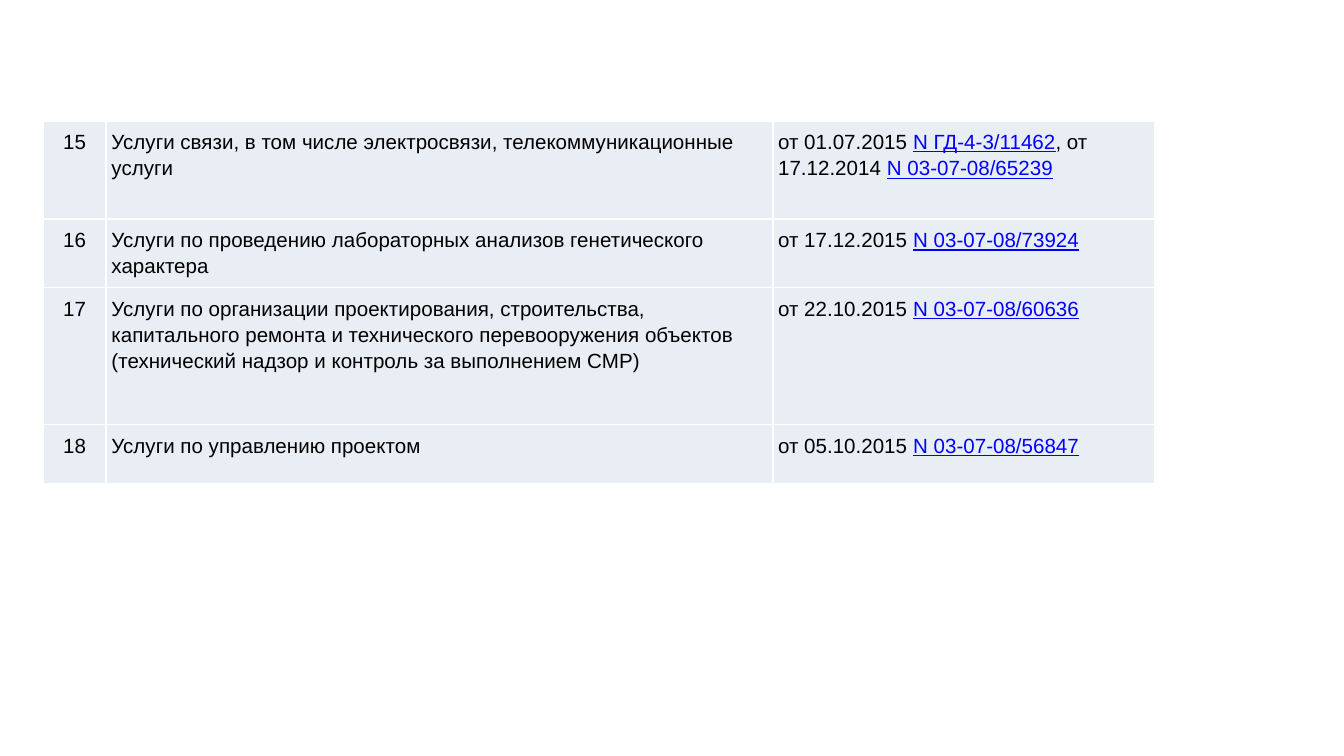
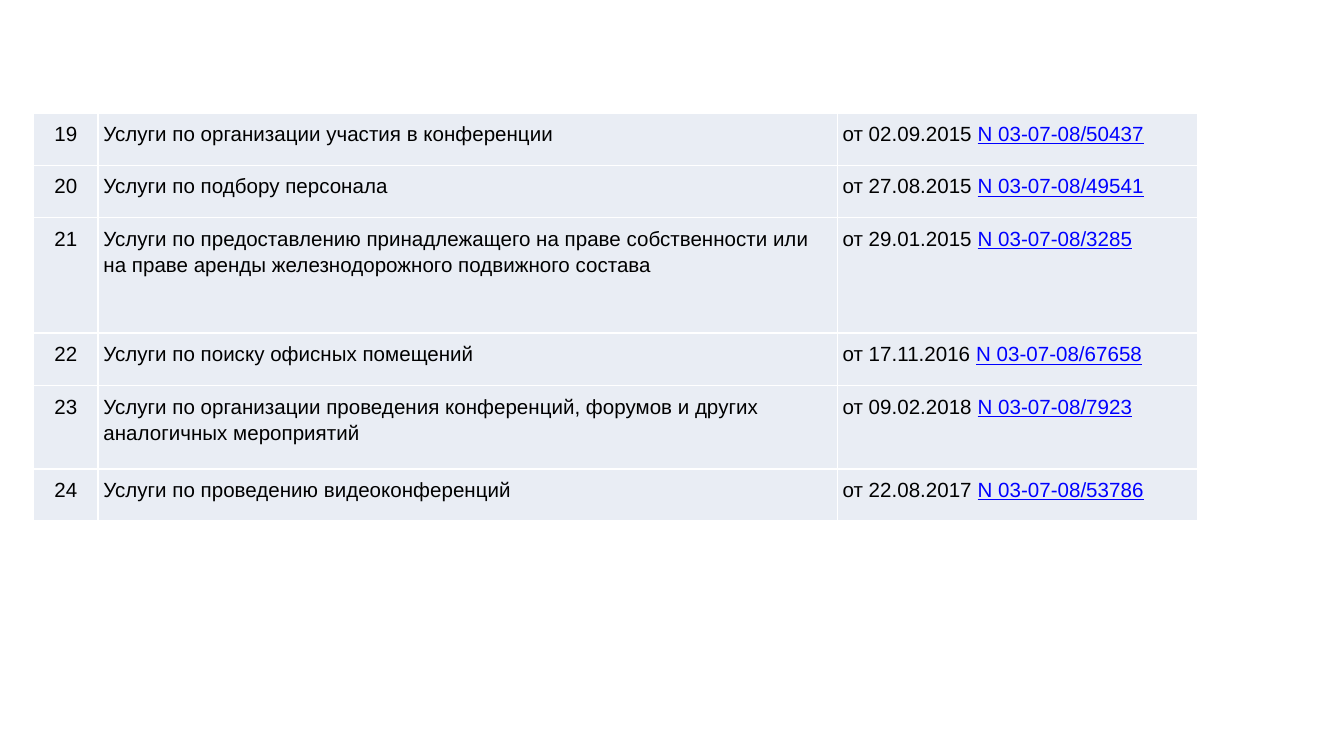
from lxml.etree import SubElement
from pptx import Presentation
from pptx.dml.color import RGBColor
from pptx.enum.text import PP_ALIGN as Align
from pptx.oxml.ns import qn
from pptx.util import Inches, Pt

FONT = "Arial"
TEXT, LINK, CELL, BORDER = "000000", "0000FF", "E9EDF4", "FFFFFF"

COMMUNICATION_SERVICES = [
    (0.73, "Услуги связи, в том числе электросвязи, телекоммуникационные услуги",
     [("от 01.07.2015 ", "N ГД-4-3/11462"), (", от 17.12.2014 ", "N 03-07-08/65239")]),
    (0.51, "Услуги по проведению лабораторных анализов генетического характера",
     [("от 17.12.2015 ", "N 03-07-08/73924")]),
    (1.02, "Услуги по организации проектирования, строительства, капитального ремонта "
           "и технического перевооружения объектов (технический надзор и контроль "
           "за выполнением СМР)",
     [("от 22.10.2015 ", "N 03-07-08/60636")]),
    (0.44, "Услуги по управлению проектом", [("от 05.10.2015 ", "N 03-07-08/56847")]),
]

CONFERENCE_SERVICES = [
    (0.39, "Услуги по организации участия в конференции",
     [("от 02.09.2015 ", "N 03-07-08/50437")]),
    (0.39, "Услуги по подбору персонала", [("от 27.08.2015 ", "N 03-07-08/49541")]),
    (0.86, "Услуги по предоставлению принадлежащего на праве собственности или "
           "на праве аренды железнодорожного подвижного состава",
     [("от 29.01.2015 ", "N 03-07-08/3285")]),
    (0.39, "Услуги по поиску офисных помещений", [("от 17.11.2016 ", "N 03-07-08/67658")]),
    (0.62, "Услуги по организации проведения конференций, форумов и других "
           "аналогичных мероприятий",
     [("от 09.02.2018 ", "N 03-07-08/7923")]),
    (0.39, "Услуги по проведению видеоконференций",
     [("от 22.08.2017 ", "N 03-07-08/53786")]),
]


def rgb(value):
    return RGBColor.from_string(value)


def add_text(p, text, color=TEXT, underline=False, size=11):
    r = p.add_run()
    r.text = text
    r.font.name = FONT
    r.font.size = Pt(size)
    r.font.color.rgb = rgb(color)
    r.font.underline = underline


def set_borders(cell, color=BORDER, width=1):
    tc_pr = cell._tc.get_or_add_tcPr()
    for side in ("a:lnL", "a:lnR", "a:lnT", "a:lnB"):
        line = SubElement(tc_pr, qn(side), w=str(Pt(width)))
        fill = SubElement(line, qn("a:solidFill"))
        SubElement(fill, qn("a:srgbClr"), val=color)


def format_cell(cell, align=Align.LEFT):
    """Style a cell and return its paragraph, ready for text."""
    set_borders(cell)
    cell.fill.solid()
    cell.fill.fore_color.rgb = rgb(CELL)
    cell.margin_left = cell.margin_right = Inches(0.04)
    cell.margin_top = cell.margin_bottom = Inches(0.05)
    p = cell.text_frame.paragraphs[0]
    p.alignment = align
    p.line_spacing = 1.15
    return p


def add_services_table(slide, left, top, widths, services, first_number):
    """Numbered services with the dates and numbers of the letters on each."""
    height = sum(service[0] for service in services)
    frame = slide.shapes.add_table(len(services), len(widths), Inches(left), Inches(top),
                                   Inches(sum(widths)), Inches(height))
    table = frame.table
    table.first_row = table.horz_banding = False
    for column, width in zip(table.columns, widths):
        column.width = Inches(width)
    for i, (row_height, name, letters) in enumerate(services):
        row = table.rows[i]
        row.height = Inches(row_height)
        number_cell, name_cell, letters_cell = row.cells
        add_text(format_cell(number_cell, Align.CENTER), str(first_number + i))
        add_text(format_cell(name_cell), name)
        p = format_cell(letters_cell)
        for date, letter_number in letters:
            add_text(p, date)
            add_text(p, letter_number, color=LINK, underline=True)


def main():
    prs = Presentation()
    prs.slide_width = Inches(10)
    prs.slide_height = prs.slide_width * 9 // 16
    blank = prs.slide_layouts[6]
    add_services_table(prs.slides.add_slide(blank), 0.32, 0.9, (0.47, 4.96, 2.84),
                       COMMUNICATION_SERVICES, first_number=15)
    add_services_table(prs.slides.add_slide(blank), 0.25, 0.84, (0.48, 5.5, 2.68),
                       CONFERENCE_SERVICES, first_number=19)
    prs.save("out.pptx")


if __name__ == "__main__":
    main()
